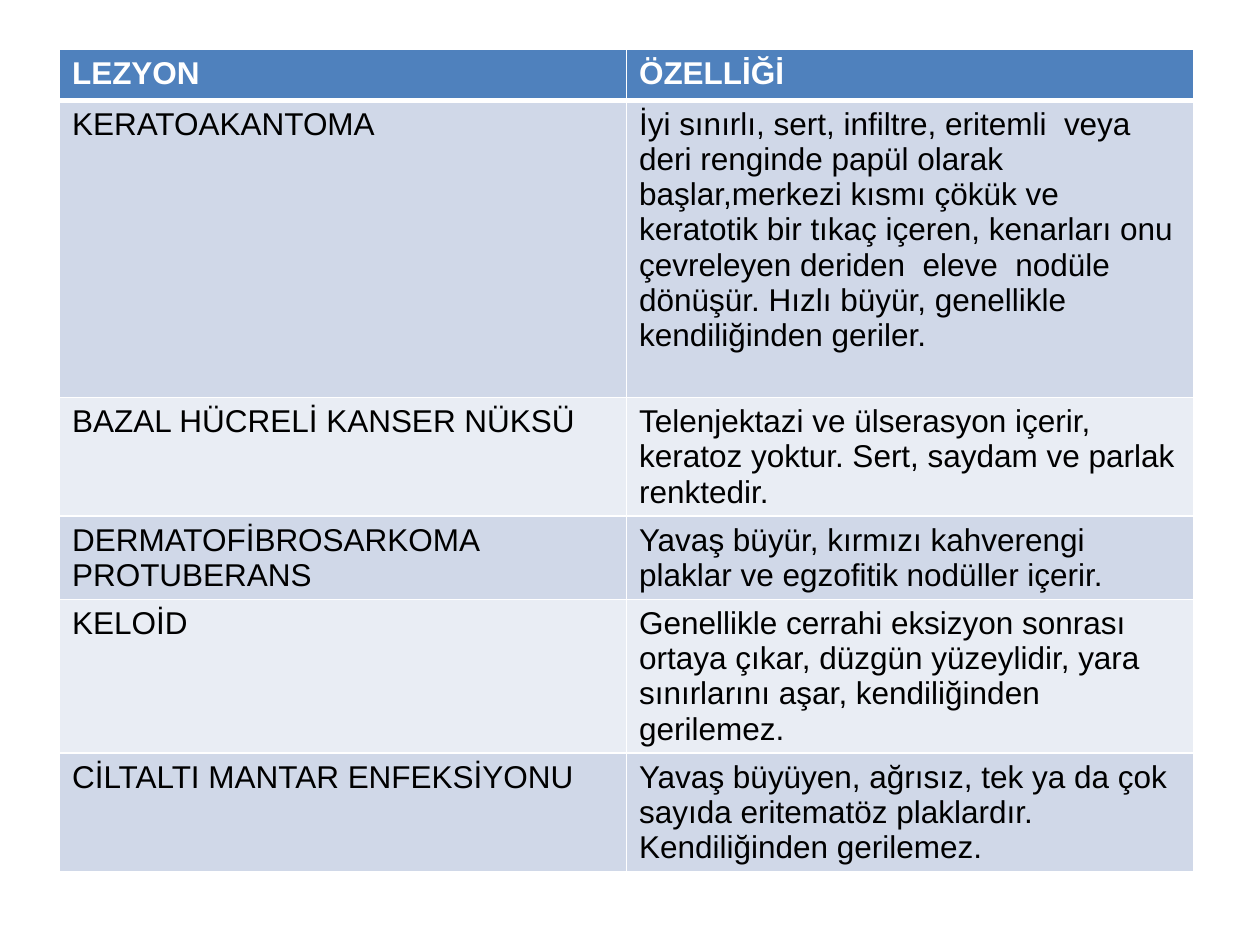
from pptx import Presentation
from pptx.dml.color import RGBColor
from pptx.oxml import parse_xml
from pptx.oxml.ns import nsdecls
from pptx.util import Pt

WHITE = RGBColor(0xFF, 0xFF, 0xFF)
BLACK = RGBColor(0x00, 0x00, 0x00)
HEADER = RGBColor(0x4F, 0x81, 0xBD)
BANDS = [RGBColor(0xE9, 0xED, 0xF4), RGBColor(0xD0, 0xD8, 0xE8)]

ROWS = [
    ("LEZYON", "ÖZELLİĞİ"),
    ("KERATOAKANTOMA",
     "İyi sınırlı, sert, infiltre, eritemli  veya deri renginde papül olarak "
     "başlar,merkezi kısmı çökük ve keratotik bir tıkaç içeren, kenarları onu "
     "çevreleyen deriden  eleve  nodüle dönüşür. Hızlı büyür, genellikle "
     "kendiliğinden geriler."),
    ("BAZAL HÜCRELİ KANSER NÜKSÜ",
     "Telenjektazi ve ülserasyon içerir, keratoz yoktur. Sert, saydam ve "
     "parlak renktedir."),
    ("DERMATOFİBROSARKOMA PROTUBERANS",
     "Yavaş büyür, kırmızı kahverengi plaklar ve egzofitik nodüller içerir."),
    ("KELOİD",
     "Genellikle cerrahi eksizyon sonrası ortaya çıkar, düzgün yüzeylidir, "
     "yara sınırlarını aşar, kendiliğinden gerilemez."),
    ("CİLTALTI MANTAR ENFEKSİYONU",
     "Yavaş büyüyen, ağrısız, tek ya da çok sayıda eritematöz plaklardır. "
     "Kendiliğinden gerilemez."),
]
HEIGHTS = [29, 170, 67.4, 47.6, 87.4, 67.4]


def add_border(cell, side, width):
    cell._tc.get_or_add_tcPr().append(parse_xml(
        f'<a:{side} {nsdecls("a")} w="{Pt(width)}"><a:solidFill>'
        f'<a:srgbClr val="{WHITE}"/></a:solidFill></a:{side}>'))


prs = Presentation()
prs.slide_width, prs.slide_height = Pt(720), Pt(540)
s = prs.slides.add_slide(prs.slide_layouts[6])

table = s.shapes.add_table(len(ROWS), 2, Pt(34), Pt(28.3),
                           Pt(648), Pt(sum(HEIGHTS))).table
for col in table.columns:
    col.width = Pt(324)

for i, (texts, height) in enumerate(zip(ROWS, HEIGHTS)):
    table.rows[i].height = Pt(height)
    for j, text in enumerate(texts):
        cell = table.cell(i, j)
        for side in ("lnL", "lnR", "lnT", "lnB"):
            heavy = (i, side) in [(0, "lnB"), (1, "lnT")]
            add_border(cell, side, 3 if heavy else 1)
        cell.fill.solid()
        cell.fill.fore_color.rgb = BANDS[i % 2] if i else HEADER
        cell.text_frame.text = text
        font = cell.text_frame.paragraphs[0].runs[0].font
        font.name = "Arial"
        font.size = Pt(18)
        font.bold = i == 0
        font.color.rgb = BLACK if i else WHITE

prs.save("out.pptx")
